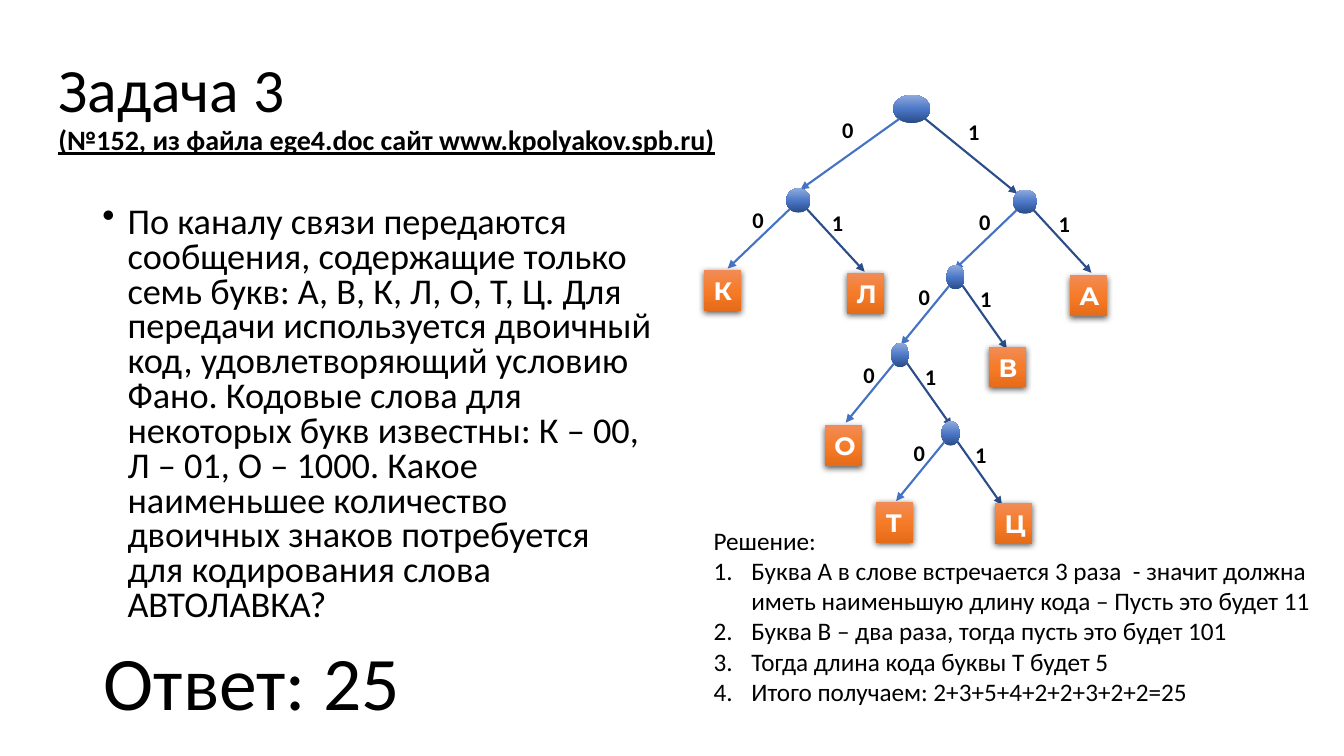
from pptx import Presentation
from pptx.dml.color import RGBColor
from pptx.enum.shapes import MSO_CONNECTOR, MSO_SHAPE
from pptx.enum.text import MSO_ANCHOR, MSO_AUTO_SIZE, PP_ALIGN
from pptx.oxml import parse_xml
from pptx.oxml.ns import nsdecls, qn
from pptx.util import Pt

OVAL, RECT = MSO_SHAPE.OVAL, MSO_SHAPE.RECTANGLE
STRAIGHT = MSO_CONNECTOR.STRAIGHT
LEFT, CENTER = PP_ALIGN.LEFT, PP_ALIGN.CENTER
MIDDLE = MSO_ANCHOR.MIDDLE
NO_AUTOFIT = MSO_AUTO_SIZE.NONE

BLACK, WHITE = "000000", "FFFFFF"
NODE_STOPS = [(0, "2A4B86"), (48, "4A76C6"), (100, "8FAADC")]
LEAF_STOPS = [(0, "F18C57"), (50, "F67B28"), (100, "E56C19")]
NS = nsdecls("a")
DOT = f'<a:buChar {NS} char="•"/>'
NUMBER = f'<a:buAutoNum {NS} type="arabicPeriod"/>'


def write(s, text, size, bold=False, color=BLACK, font="Calibri", align=LEFT,
          wrap=True, spacing=1.0, bullet=None, indent=0):
    """Add one paragraph to the shape and return it."""
    tf = s.text_frame
    tf.word_wrap = wrap
    p = tf.add_paragraph() if tf.text else tf.paragraphs[0]
    p.alignment, p.line_spacing = align, spacing
    if bullet:
        pPr = p._p.get_or_add_pPr()
        pPr.set("marL", str(Pt(indent)))
        pPr.set("indent", str(-Pt(indent)))
        pPr.append(parse_xml(bullet))
    r = p.add_run()
    r.text = text
    r.font.size, r.font.bold, r.font.name = Pt(size), bold, font
    r.font.color.rgb = RGBColor.from_string(color)
    return p


def add_gradient_shape(kind, x, y, w, h, stops, angle):
    s = slide.shapes.add_shape(kind, Pt(x), Pt(y), Pt(w), Pt(h))
    s.shadow.inherit = False
    s.line.fill.background()
    s.fill.gradient()
    s.fill.gradient_angle = angle
    gs_list = s._element.spPr.find(qn("a:gradFill")).find(qn("a:gsLst"))
    for gs in list(gs_list):
        gs_list.remove(gs)
    for pos, color in stops:
        gs_list.append(parse_xml(
            f'<a:gs {NS} pos="{pos * 1000}"><a:srgbClr val="{color}"/></a:gs>'))
    return s


prs = Presentation()
prs.slide_width, prs.slide_height = Pt(960), Pt(540)
slide = prs.slides.add_slide(prs.slide_layouts[5])

# Title
title = slide.shapes.title
title.left, title.top, title.width, title.height = Pt(34.5), Pt(25), Pt(828), Pt(104.4)
title.text_frame.auto_size = NO_AUTOFIT
title.text_frame.vertical_anchor = MIDDLE
p = write(title, "Задача 3", 44, spacing=0.9)
p.add_line_break()
r = p.add_run()
r.text = "(№152, из файла ege4.doc сайт www.kpolyakov.spb.ru)"
r.font.size, r.font.bold, r.font.underline, r.font.name = Pt(20), True, True, "Calibri"
r.font.color.rgb = RGBColor.from_string(BLACK)

# Problem statement and answer
problem = slide.shapes.add_textbox(Pt(66), Pt(144), Pt(408), Pt(342.7))
write(problem,
      "По каналу связи передаются сообщения, содержащие только семь букв: "
      "А, В, К, Л, О, Т, Ц. Для передачи используется двоичный код, "
      "удовлетворяющий условию Фано. Кодовые слова для некоторых букв известны: "
      "К – 00, Л – 01, О – 1000. Какое наименьшее количество двоичных знаков "
      "потребуется для кодирования слова АВТОЛАВКА?",
      25.9, spacing=0.8, bullet=DOT, indent=18)
answer = slide.shapes.add_textbox(Pt(66), Pt(450), Pt(228), Pt(72.7))
write(answer, "Ответ: 25", 54, align=CENTER, wrap=False)

# Code tree: node size, then for each branch its digit, colour, start, end and
# label centre, all measured from the node's top left corner
ROOT = (26.6, 20.2, [("0", "4472C4", (4.3, 17.3), (-66.2, 67.7), (-32.4, 24.8)),
                     ("1", "2B4D89", (23, 17.3), (88.6, 70.6), (57.6, 26.3))])
WIDE = (17.3, 17.3, [("0", "4472C4", (2.5, 14.8), (-41.8, 57.2), (-20.2, 22.7)),
                     ("1", "2B4D89", (14.8, 14.8), (56, 59.5), (36.7, 24.5))])
NARROW = (13, 17.3, [("0", "4472C4", (2.2, 14.6), (-32.4, 56.9), (-15.8, 22.7)),
                     ("1", "2B4D89", (11.5, 14.6), (43.2, 59.6), (28.1, 24.1))])
NODES = [(638, 67.7, ROOT), (561.6, 134.6, WIDE), (723.6, 135.4, WIDE),
         (676, 189.4, NARROW), (636.5, 245, NARROW), (672.5, 301, NARROW)]
LABEL_W, LABEL_H = 23, 26.6

for x, y, (w, h, branches) in NODES:
    add_gradient_shape(OVAL, x, y, w, h, NODE_STOPS, 90)
    for digit, color, (x1, y1), (x2, y2), (cx, cy) in branches:
        c = slide.shapes.add_connector(
            STRAIGHT, Pt(x + x1), Pt(y + y1), Pt(x + x2), Pt(y + y2))
        c.line.width = Pt(1.5)
        c.line.color.rgb = RGBColor.from_string(color)
        c.line._get_or_add_ln().append(parse_xml(f'<a:tailEnd {NS} type="triangle"/>'))
        c._element.spPr.append(parse_xml(f"<a:effectLst {NS}/>"))
        label = slide.shapes.add_textbox(
            Pt(x + cx - LABEL_W / 2), Pt(y + cy - LABEL_H / 2), Pt(LABEL_W), Pt(LABEL_H))
        write(label, digit, 16, bold=True, align=CENTER, wrap=False)

LEAVES = [("К", 502.6, 193), ("Л", 604.8, 195), ("О", 589, 303.8), ("А", 764, 196.6),
          ("В", 706.3, 247.7), ("Т", 625.7, 358.6), ("Ц", 710.6, 359.3)]
for letter, x, y in LEAVES:
    leaf = add_gradient_shape(RECT, x, y, 26.6, 29, LEAF_STOPS, 270)
    leaf._element.spPr.find(qn("a:effectLst")).append(parse_xml(
        f'<a:outerShdw {NS} blurRad="{Pt(4.5)}" dist="{Pt(1.5)}" dir="5400000" '
        'algn="ctr" rotWithShape="0"><a:srgbClr val="000000">'
        '<a:alpha val="63000"/></a:srgbClr></a:outerShdw>'))
    write(leaf, letter, 18, bold=True, color=WHITE, font="Montserrat")

# Solution
solution = slide.shapes.add_textbox(Pt(502.6), Pt(371.5), Pt(457), Pt(138.2))
write(solution, "Решение:", 18)
for step in ["Буква А в слове встречается 3 раза  - значит должна иметь "
             "наименьшую длину кода – Пусть это будет 11",
             "Буква В – два раза, тогда пусть это будет 101",
             "Тогда длина кода буквы Т будет 5",
             "Итого получаем: 2+3+5+4+2+2+3+2+2=25"]:
    write(solution, step, 18, bullet=NUMBER, indent=27)

prs.save("out.pptx")
